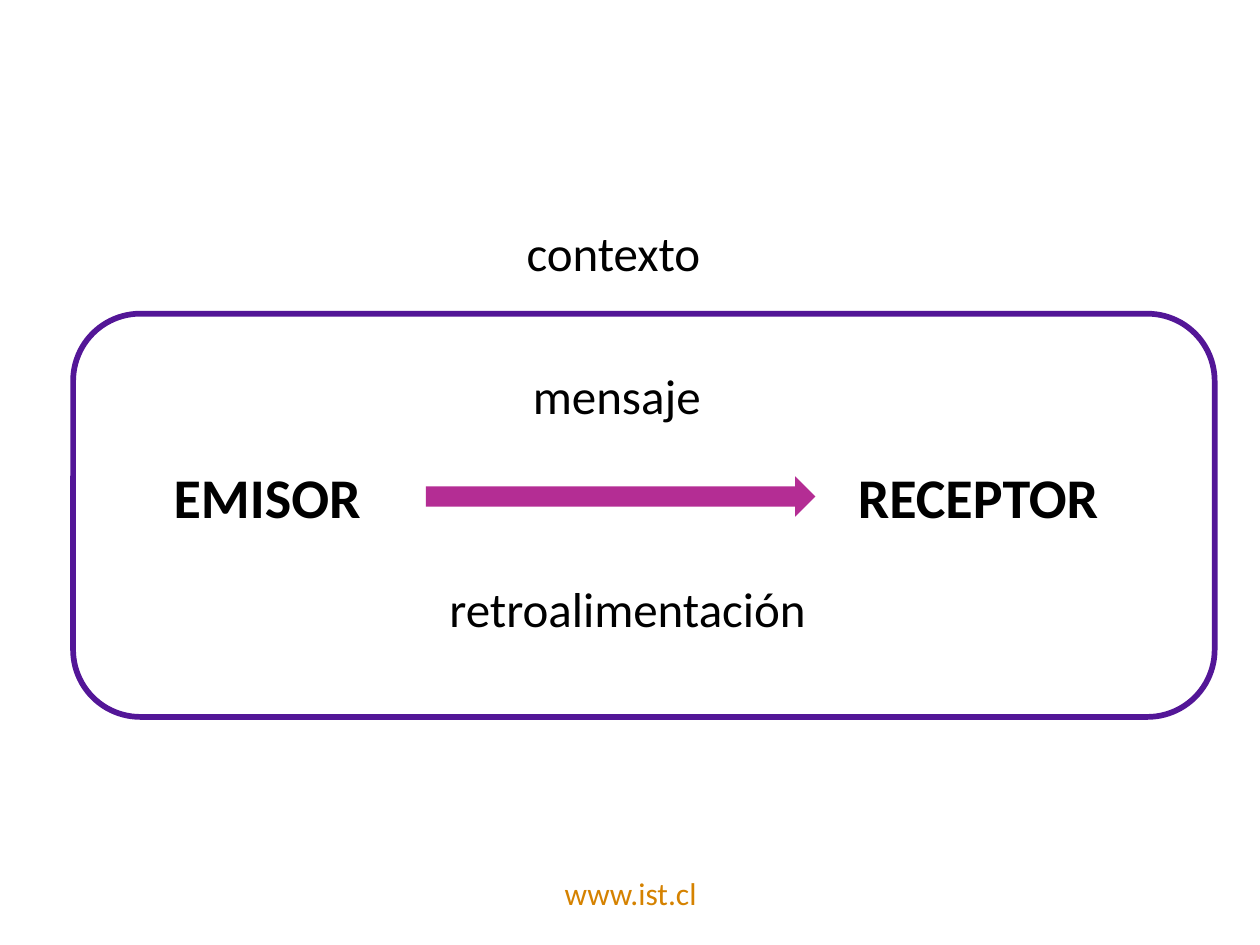
from pptx import Presentation
from pptx.dml.color import RGBColor
from pptx.enum.shapes import MSO_SHAPE
from pptx.enum.text import PP_ALIGN
from pptx.util import Pt

ARROW = MSO_SHAPE.RIGHT_ARROW
ROUND = MSO_SHAPE.ROUNDED_RECTANGLE
LEFT, CENTER = PP_ALIGN.LEFT, PP_ALIGN.CENTER
BLACK = RGBColor(0x00, 0x00, 0x00)
ORANGE = RGBColor(0xD5, 0x82, 0x00)
PINK = RGBColor(0xB4, 0x2D, 0x94)
PURPLE = RGBColor(0x53, 0x16, 0x97)

deck = Presentation()
deck.slide_width, deck.slide_height = Pt(720), Pt(540)
slide = deck.slides.add_slide(deck.slide_layouts[6])
shapes = slide.shapes

labels = [
    ("www.ist.cl", 258.5, 496, 203.8, 29, 18, False, ORANGE, CENTER, True),
    ("EMISOR", 92.2, 260.6, 122.4, 46, 32, True, BLACK, LEFT, False),
    ("RECEPTOR", 483.1, 260.6, 154.8, 46, 32, True, BLACK, LEFT, True),
    ("mensaje", 297.4, 205.2, 111.6, 41, 28, False, BLACK, LEFT, False),
    ("retroalimentación", 249.8, 326.9, 220.3, 41, 28, False, BLACK, LEFT, False),
    ("contexto", 293.8, 123.8, 115.2, 41, 28, False, BLACK, LEFT, False),
]
for text, left, top, width, height, size, bold, color, align, wrap in labels:
    box = shapes.add_textbox(Pt(left), Pt(top), Pt(width), Pt(height))
    frame = box.text_frame
    frame.word_wrap = wrap
    frame.text = text
    line = frame.paragraphs[0]
    line.alignment = align
    font = line.runs[0].font
    font.name, font.size, font.bold = "Calibri", Pt(size), bold
    font.color.rgb = color

arrow = shapes.add_shape(ARROW, Pt(243.4), Pt(272.2), Pt(222.5), Pt(23))
arrow.shadow.inherit = False
arrow.fill.solid()
arrow.fill.fore_color.rgb = PINK
arrow.line.fill.background()

border = shapes.add_shape(ROUND, Pt(41.8), Pt(179.3), Pt(652.3), Pt(230.4))
border.shadow.inherit = False
border.fill.background()
border.line.color.rgb = PURPLE
border.line.width = Pt(3.25)

deck.save("out.pptx")
